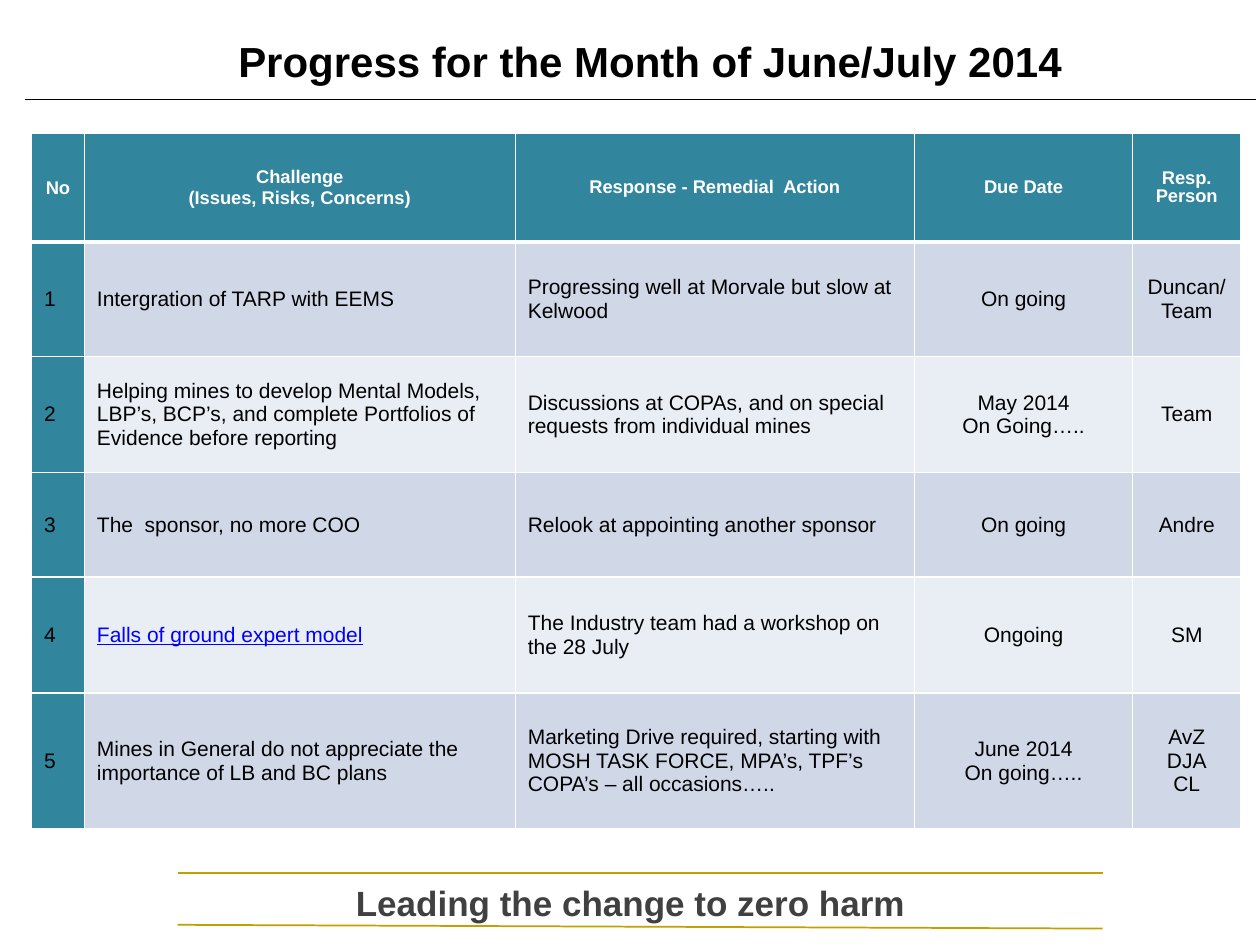
from dataclasses import dataclass

from lxml import etree
from pptx import Presentation
from pptx import util as u
from pptx.dml.color import RGBColor
from pptx.enum import shapes, text
from pptx.oxml.ns import qn


@dataclass(frozen=True)
class Theme:
    font: str = "Arial"
    ink: str = "000000"
    white: str = "FFFFFF"
    teal: str = "31859C"
    bands: tuple = ("D0D8E8", "E9EDF4")
    link: str = "0000FF"
    gold: str = "C49F00"
    grey: str = "404040"
    title_size: float = 24
    tagline_size: float = 20
    header_size: float = 10.5
    body_size: float = 12


THEME = Theme()
LEFT, CENTER = text.PP_ALIGN.LEFT, text.PP_ALIGN.CENTER
MIDDLE = text.MSO_ANCHOR.MIDDLE

COLUMN_WIDTHS = (0.42, 3.42, 3.17, 1.73, 0.86)
ROW_HEIGHTS = (0.86, 0.91, 0.92, 0.83, 0.92, 1.08)
COLUMN_ALIGNMENTS = (LEFT, LEFT, LEFT, CENTER, CENTER)
HEADINGS = ("No", "Challenge\n(Issues, Risks, Concerns)", "Response - Remedial  Action",
            "Due Date", "Resp. Person")
CHALLENGES = (
    ("Intergration of TARP with EEMS",
     "Progressing well at Morvale but slow at Kelwood", "On going", "Duncan/Team"),
    ("Helping mines to develop Mental Models, LBP’s, BCP’s, and complete Portfolios of "
     "Evidence before reporting",
     "Discussions at COPAs, and on special requests from individual mines",
     "May 2014\nOn Going…..", "Team"),
    ("The  sponsor, no more COO", "Relook at appointing another sponsor",
     "On going", "Andre"),
    ("Falls of ground expert model",
     "The Industry team had a workshop on the 28 July", "Ongoing", "SM"),
    ("Mines in General do not appreciate the importance of LB and BC plans",
     "Marketing Drive required, starting with MOSH TASK FORCE, MPA’s, TPF’s "
     "COPA’s – all occasions…..",
     "June 2014\nOn going…..", "AvZ\nDJA\nCL"),
)
LINKED_CHALLENGE = 4


def write(frame, content, size, color, alignment, bold=False, underline=False):
    """Fill a text frame with one paragraph for each line of content."""
    frame.word_wrap = True
    for index, line in enumerate(content.split("\n")):
        paragraph = frame.paragraphs[0] if index == 0 else frame.add_paragraph()
        paragraph.alignment = alignment
        run = paragraph.add_run()
        run.text = line
        run.font.name = THEME.font
        run.font.size = u.Pt(size)
        run.font.bold = bold
        run.font.underline = underline
        run.font.color.rgb = RGBColor.from_string(color)


def add_line(slide, start, end, color, width):
    line = slide.shapes.add_connector(
        shapes.MSO_CONNECTOR.STRAIGHT, *(u.Inches(length) for length in start + end))
    line.line.color.rgb = RGBColor.from_string(color)
    line.line.width = u.Pt(width)
    properties = line._element.find(qn("p:spPr"))
    etree.SubElement(properties, qn("a:effectLst"))


def set_borders(cell, widths):
    """Draw white borders; widths are points for left, right, top and bottom."""
    properties = cell._tc.get_or_add_tcPr()
    for index, (side, width) in enumerate(zip("LRTB", widths)):
        border = etree.Element(qn(f"a:ln{side}"), w=str(u.Pt(width)))
        fill = etree.SubElement(border, qn("a:solidFill"))
        etree.SubElement(fill, qn("a:srgbClr"), val=THEME.white)
        properties.insert(index, border)


def add_title(slide, left, top, width, height):
    title = slide.shapes.title
    title.left, title.top = u.Inches(left), u.Inches(top)
    title.width, title.height = u.Inches(width), u.Inches(height)
    title.text_frame.vertical_anchor = MIDDLE
    write(title.text_frame, "Progress for the Month of June/July 2014",
          THEME.title_size, THEME.ink, CENTER, bold=True)
    rule = top + height
    add_line(slide, (0.2, rule), (9.97, rule), THEME.ink, 0.75)


def format_header_cell(cell, column, content):
    cell.margin_left = cell.margin_right = u.Inches(0.04)
    cell.margin_top = cell.margin_bottom = u.Inches(0.04)
    write(cell.text_frame, content, THEME.header_size, THEME.white, CENTER, bold=True)
    if column >= 2:
        paragraph = cell.text_frame.paragraphs[0]
        paragraph.line_spacing = 0.9
        paragraph.space_before = paragraph.space_after = u.Pt(4.2)


def add_challenge_table(slide, left, top, width, height):
    rows = [HEADINGS] + [(str(number), *entries)
                         for number, entries in enumerate(CHALLENGES, 1)]
    table = slide.shapes.add_table(
        len(rows), len(HEADINGS), u.Inches(left), u.Inches(top),
        u.Inches(width), u.Inches(height)).table
    for column, column_width in zip(table.columns, COLUMN_WIDTHS):
        column.width = u.Inches(column_width)
    for row, row_height in zip(table.rows, ROW_HEIGHTS):
        row.height = u.Inches(row_height)

    for row, entries in enumerate(rows):
        for column, content in enumerate(entries):
            cell = table.cell(row, column)
            cell.vertical_anchor = MIDDLE
            if row == 0:
                format_header_cell(cell, column, content)
            else:
                linked = row == LINKED_CHALLENGE and column == 1
                write(cell.text_frame, content, THEME.body_size,
                      THEME.link if linked else THEME.ink,
                      COLUMN_ALIGNMENTS[column], underline=linked)
            in_teal = row == 0 or column == 0
            color = THEME.teal if in_teal else THEME.bands[(row - 1) % 2]
            cell.fill.solid()
            cell.fill.fore_color.rgb = RGBColor.from_string(color)
            set_borders(cell, (1, 1, 3 if row == 1 else 1, 3 if row == 0 else 1))


def add_tagline(slide, left, top, width, height):
    """Place the closing line of text between two gold rules."""
    right, bottom = 8.75, top + height
    add_line(slide, (left, top - 0.02), (right, top - 0.02), THEME.gold, 1)
    add_line(slide, (left, bottom), (right, bottom + 0.03), THEME.gold, 1)
    box = slide.shapes.add_textbox(
        u.Inches(left), u.Inches(top), u.Inches(width), u.Inches(height))
    write(box.text_frame, "Leading the change to zero harm",
          THEME.tagline_size, THEME.grey, CENTER, bold=True)
    paragraph = box.text_frame.paragraphs[0]
    paragraph.space_before = u.Pt(4)
    properties = paragraph._p.get_or_add_pPr()
    properties.set("marL", str(u.Inches(0.38)))
    properties.set("indent", str(u.Inches(-0.38)))


def main():
    presentation = Presentation()
    presentation.slide_width = u.Inches(10)
    presentation.slide_height = u.Inches(7.5)
    title_only = presentation.slide_layouts[5]
    slide = presentation.slides.add_slide(title_only)
    add_title(slide, 0.24, 0.17, 9.84, 0.62)
    add_challenge_table(slide, 0.25, 1.06, 9.6, 5.52)
    add_tagline(slide, 1.41, 6.95, 7.19, 0.39)
    presentation.save("out.pptx")


if __name__ == "__main__":
    main()
